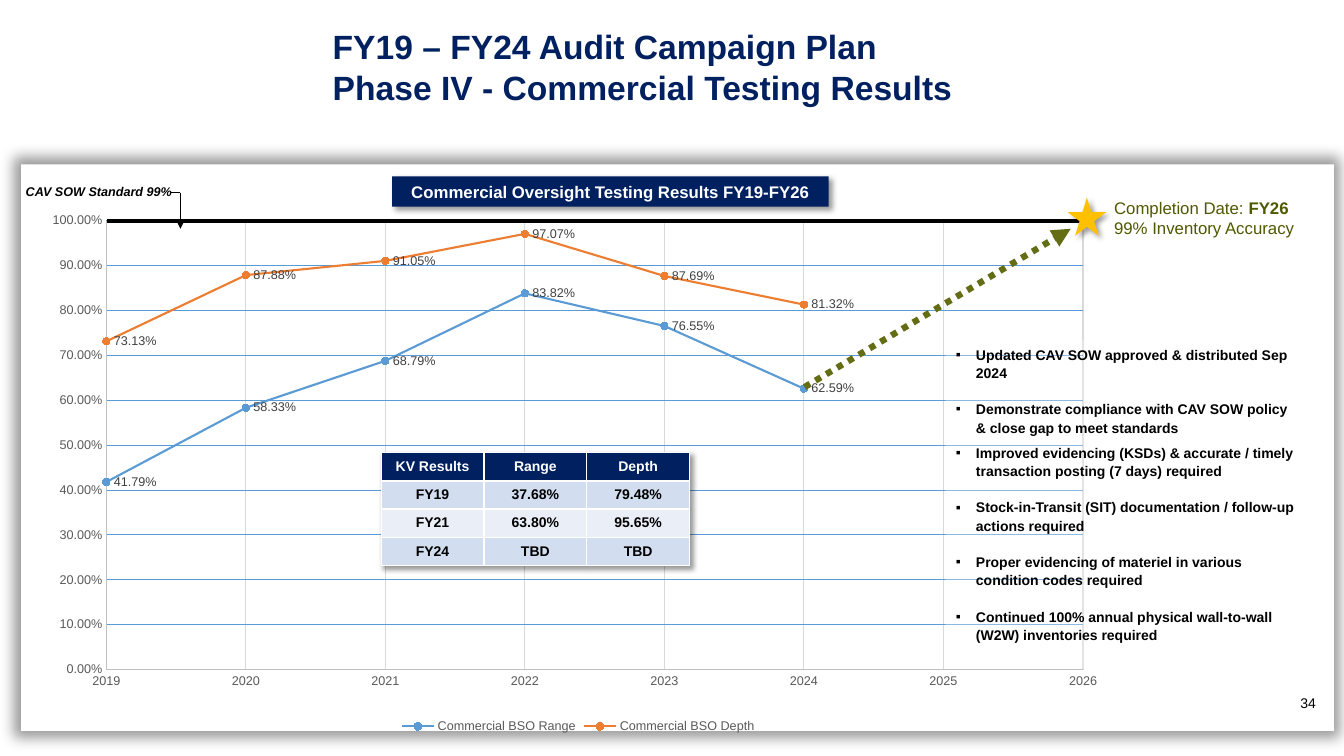
from lxml import etree
from pptx import Presentation
from pptx.chart.data import XyChartData
from pptx.chart.datalabel import DataLabels
from pptx.dml.color import RGBColor
from pptx.enum.chart import XL_CHART_TYPE, XL_LABEL_POSITION, XL_LEGEND_POSITION, XL_MARKER_STYLE, XL_TICK_MARK
from pptx.enum.dml import MSO_LINE
from pptx.enum.shapes import MSO_CONNECTOR, MSO_SHAPE
from pptx.enum.text import MSO_ANCHOR, MSO_AUTO_SIZE, PP_ALIGN
from pptx.oxml import parse_xml
from pptx.oxml.ns import qn
from pptx.util import Emu, Pt

SCATTER_LINES = XL_CHART_TYPE.XY_SCATTER_LINES
LABEL_RIGHT = XL_LABEL_POSITION.RIGHT
LEGEND_BOTTOM = XL_LEGEND_POSITION.BOTTOM
CIRCLE = XL_MARKER_STYLE.CIRCLE
NO_TICK = XL_TICK_MARK.NONE
DOTTED = MSO_LINE.ROUND_DOT
STRAIGHT = MSO_CONNECTOR.STRAIGHT
RECTANGLE, STAR = MSO_SHAPE.RECTANGLE, MSO_SHAPE.STAR_5_POINT
TOP, MIDDLE, BOTTOM = MSO_ANCHOR.TOP, MSO_ANCHOR.MIDDLE, MSO_ANCHOR.BOTTOM
NO_FIT = MSO_AUTO_SIZE.NONE
LEFT, CENTER = PP_ALIGN.LEFT, PP_ALIGN.CENTER
SCALE = 9144
NAVY, WHITE, BLACK, OLIVE = "002060", "FFFFFF", "000000", "505800"
BLUE, ORANGE, GRAY = "5B9BD5", "ED7D31", "595959"
DRAWING = 'xmlns:a="http://schemas.openxmlformats.org/drawingml/2006/main"'
CHART = 'xmlns:c="http://schemas.openxmlformats.org/drawingml/2006/chart"'


def px(*lengths):
    return [Emu(length * SCALE) for length in lengths]


def color(hex_text):
    return RGBColor.from_string(hex_text)


def shadow_xml(blur=4, distance=3, grow=""):
    return parse_xml(
        f'<a:effectLst {DRAWING}><a:outerShdw blurRad="{blur * 12700}" dist="{distance * 12700}" '
        f'dir="2700000" {grow} rotWithShape="0"><a:srgbClr val="000000"><a:alpha val="40000"/>'
        '</a:srgbClr></a:outerShdw></a:effectLst>')


def write(frame, paragraphs, size=10, tint=BLACK, bold=False, italic=False, align=LEFT,
          leading=None, gaps=None, bullet=None, anchor=TOP, margins=None):
    frame.word_wrap = True
    frame.vertical_anchor = anchor
    if margins is not None:
        frame.margin_left, frame.margin_top, frame.margin_right, frame.margin_bottom = px(*margins)
    for index, runs in enumerate(paragraphs):
        paragraph = frame.paragraphs[0] if index == 0 else frame.add_paragraph()
        if bullet:
            properties = paragraph._p.get_or_add_pPr()
            properties.set("marL", str(20 * SCALE))
            properties.set("indent", str(-20 * SCALE))
            etree.SubElement(properties, qn("a:buFont")).set("typeface", "Arial")
            etree.SubElement(properties, qn("a:buChar")).set("char", bullet)
        paragraph.alignment = align
        paragraph.space_before = Pt(gaps[index] if gaps else 0)
        if leading:
            paragraph.line_spacing = Pt(leading)
        for text, strong in [(runs, bold)] if isinstance(runs, str) else runs:
            run = paragraph.add_run()
            run.text = text
            run.font.name, run.font.size = "Arial", Pt(size)
            run.font.bold, run.font.italic = strong, italic
            run.font.color.rgb = color(tint)


def style_font(font, size, tint):
    font.name, font.size = "Arial", Pt(size)
    font.color.rgb = color(tint)


def style_line(line, tint, width):
    line.color.rgb = color(tint)
    line.width = Pt(width)


class SlideBuilder:
    """Holds the current slide and draws each kind of element on it."""

    def __init__(self, deck):
        self.slide = deck.slides.add_slide(deck.slide_layouts[1])
        self.shapes = self.slide.shapes

    def shape(self, kind, place, fill, shadow):
        shape = self.shapes.add_shape(kind, *px(*place))
        shape.shadow.inherit = False
        shape.fill.solid()
        shape.fill.fore_color.rgb = color(fill)
        shape.line.fill.background()
        properties = shape._element.spPr
        properties.replace(properties.find(qn("a:effectLst")), shadow)
        return shape

    def text(self, place, paragraphs, **style):
        write(self.shapes.add_textbox(*px(*place)).text_frame, paragraphs, **style)

    def placeholder(self, index, place, paragraphs, **style):
        holder = self.slide.placeholders[index]
        holder.left, holder.top, holder.width, holder.height = px(*place)
        self.shapes._spTree.append(holder._element)
        holder.text_frame.auto_size = NO_FIT
        write(holder.text_frame, paragraphs, **style)
        return holder

    def line(self, ends, tint, width, arrow=False, dash=None):
        connector = self.shapes.add_connector(STRAIGHT, *px(*ends))
        style_line(connector.line, tint, width)
        if dash:
            connector.line.dash_style = dash
        if arrow:
            etree.SubElement(connector.line._get_or_add_ln(), qn("a:tailEnd")).set("type", "triangle")
        etree.SubElement(connector._element.spPr, qn("a:effectLst"))

    def table(self, place, rows):
        frame = self.shapes.add_table(len(rows), len(rows[0]), *px(*place))
        frame._element.graphic.graphicData.tbl.tblPr.insert(0, shadow_xml())
        for row, values in enumerate(rows):
            for column, value in enumerate(values):
                cell = frame.table.cell(row, column)
                cell.margin_left, cell.margin_top, cell.margin_right, cell.margin_bottom = px(6, 3, 6, 3)
                cell.vertical_anchor = MIDDLE
                cell.fill.solid()
                cell.fill.fore_color.rgb = color(("EAEFF7", "D2DEEF")[row % 2] if row else NAVY)
                write(cell.text_frame, [value], bold=True, align=CENTER, tint=BLACK if row else WHITE)
                for order, side in enumerate("LRTB"):
                    heavy = (row, side) in ((0, "B"), (1, "T"))
                    cell._tc.get_or_add_tcPr().insert(order, parse_xml(
                        f'<a:ln{side} {DRAWING} w="{19050 if heavy else 12700}"><a:solidFill>'
                        f'<a:srgbClr val="{WHITE}"/></a:solidFill></a:ln{side}>'))

    def chart(self, place, years, results, layout):
        data = XyChartData(number_format="0.00%")
        for name, _, rates in results:
            series = data.add_series(name)
            for year, rate in zip(years, rates):
                series.add_data_point(year, rate)
        chart = self.shapes.add_chart(SCATTER_LINES, *px(*place), data).chart
        style_font(chart.font, 10, BLACK)
        chart.has_title = False
        chart.has_legend = True
        chart.legend.position = LEGEND_BOTTOM
        chart.legend.include_in_layout = False
        style_font(chart.legend.font, 9, GRAY)
        chart.plots[0].vary_by_categories = False
        for axis, low, high, step, pattern, grid in (
                (chart.category_axis, 2019, 2026, 1, "0", "D9D9D9"),
                (chart.value_axis, 0, 1, 0.1, "0.00%", BLUE)):
            axis.minimum_scale, axis.maximum_scale, axis.major_unit = low, high, step
            axis.major_tick_mark = axis.minor_tick_mark = NO_TICK
            axis.tick_labels.number_format = pattern
            axis.tick_labels.number_format_is_linked = False
            style_font(axis.tick_labels.font, 9, GRAY)
            style_line(axis.format.line, "BFBFBF", 0.75)
            axis.has_major_gridlines = True
            style_line(axis.major_gridlines.format.line, grid, 0.75)
        for series, (_, tint, _) in zip(chart.plots[0].series, results):
            style_line(series.format.line, tint, 1.5)
            series.marker.style, series.marker.size = CIRCLE, 5
            series.marker.format.fill.solid()
            series.marker.format.fill.fore_color.rgb = color(tint)
            style_line(series.marker.format.line, tint, 0.75)
            labels = DataLabels(series._element.get_or_add_dLbls())
            labels.show_value = True
            labels.number_format, labels.number_format_is_linked = "0.00%", False
            labels.position = LABEL_RIGHT
            style_font(labels.font, 9, "404040")
        space = chart._chartSpace
        space.find(qn("c:chart")).addnext(parse_xml(
            f'<c:spPr {CHART} {DRAWING}><a:noFill/><a:ln><a:noFill/></a:ln></c:spPr>'))
        plot_area = space.find(".//" + qn("c:plotArea"))
        for automatic in plot_area.findall(qn("c:layout")):
            plot_area.remove(automatic)
        sizes = "".join(f'<c:{key} val="{value}"/>' for key, value in zip("xywh", layout))
        plot_area.insert(0, parse_xml(
            f'<c:layout {CHART}><c:manualLayout><c:layoutTarget val="inner"/>'
            f'<c:xMode val="edge"/><c:yMode val="edge"/>{sizes}</c:manualLayout></c:layout>'))


def main():
    deck = Presentation()
    deck.slide_width, deck.slide_height = px(1333, 750)
    page = SlideBuilder(deck)
    page.shape(RECTANGLE, (21, 163, 1302, 562), WHITE,
               shadow_xml(10, 0, 'sx="101000" sy="102500" algn="ctr"'))
    page.chart((28, 196, 1091, 536), range(2019, 2025), [
        ("Commercial BSO Range", BLUE, (0.4179, 0.5833, 0.6879, 0.8382, 0.7655, 0.6259)),
        ("Commercial BSO Depth", ORANGE, (0.7313, 0.8788, 0.9105, 0.9707, 0.8769, 0.8132)),
    ], (0.071, 0.043, 0.888, 0.831))
    banner = page.shape(RECTANGLE, (389, 175, 433, 30), NAVY, shadow_xml())
    write(banner.text_frame, ["Commercial Oversight Testing Results FY19-FY26"],
          size=12, tint=WHITE, bold=True, align=CENTER, anchor=MIDDLE)
    page.placeholder(0, (320, 77, 700, 34), [
        "FY19 – FY24 Audit Campaign Plan", "Phase IV - Commercial Testing Results",
    ], size=24, tint=NAVY, bold=True, leading=29, anchor=BOTTOM)
    page.table((378, 449, 306, 112), [
        ("KV Results", "Range", "Depth"),
        ("FY19", "37.68%", "79.48%"),
        ("FY21", "63.80%", "95.65%"),
        ("FY24", "TBD", "TBD"),
    ])
    page.line((106, 219, 1075, 219), BLACK, 3)
    page.text((0, 178, 196, 25), ["CAV SOW Standard 99%"], size=9, bold=True, italic=True, align=CENTER)
    page.line((179, 191, 179, 227), BLACK, 1, arrow=True)
    page.line((170, 191, 179, 191), BLACK, 1)
    actions = page.placeholder(1, (938, 337, 360, 326), [
        "Updated CAV SOW approved & distributed Sep 2024",
        "Demonstrate compliance with CAV SOW policy & close gap to meet standards",
        "Improved evidencing (KSDs) & accurate / timely transaction posting (7 days) required",
        "Stock-in-Transit (SIT) documentation / follow-up actions required",
        "Proper evidencing of materiel in various condition codes required",
        "Continued 100% annual physical wall-to-wall (W2W) inventories required",
    ], bold=True, leading=13, gaps=(0, 13, 5, 13, 13, 13), bullet="▪")
    actions.fill.solid()
    actions.fill.fore_color.rgb = color(WHITE)
    tint = actions._element.spPr.find(".//" + qn("a:srgbClr"))
    etree.SubElement(tint, qn("a:alpha")).set("val", "30000")
    page.shape(STAR, (1059, 196, 38, 38), "FFC000", shadow_xml())
    page.line((798, 384, 1062, 227), "646C14", 4.5, arrow=True, dash=DOTTED)
    page.text((1105, 196, 194, 40), [
        [("Completion Date: ", False), ("FY26", True)], "99% Inventory Accuracy",
    ], size=12, tint=OLIVE, margins=(0, 0, 0, 0))
    page.text((1280, 684, 37, 27), ["34"])
    deck.save("out.pptx")


if __name__ == "__main__":
    main()
